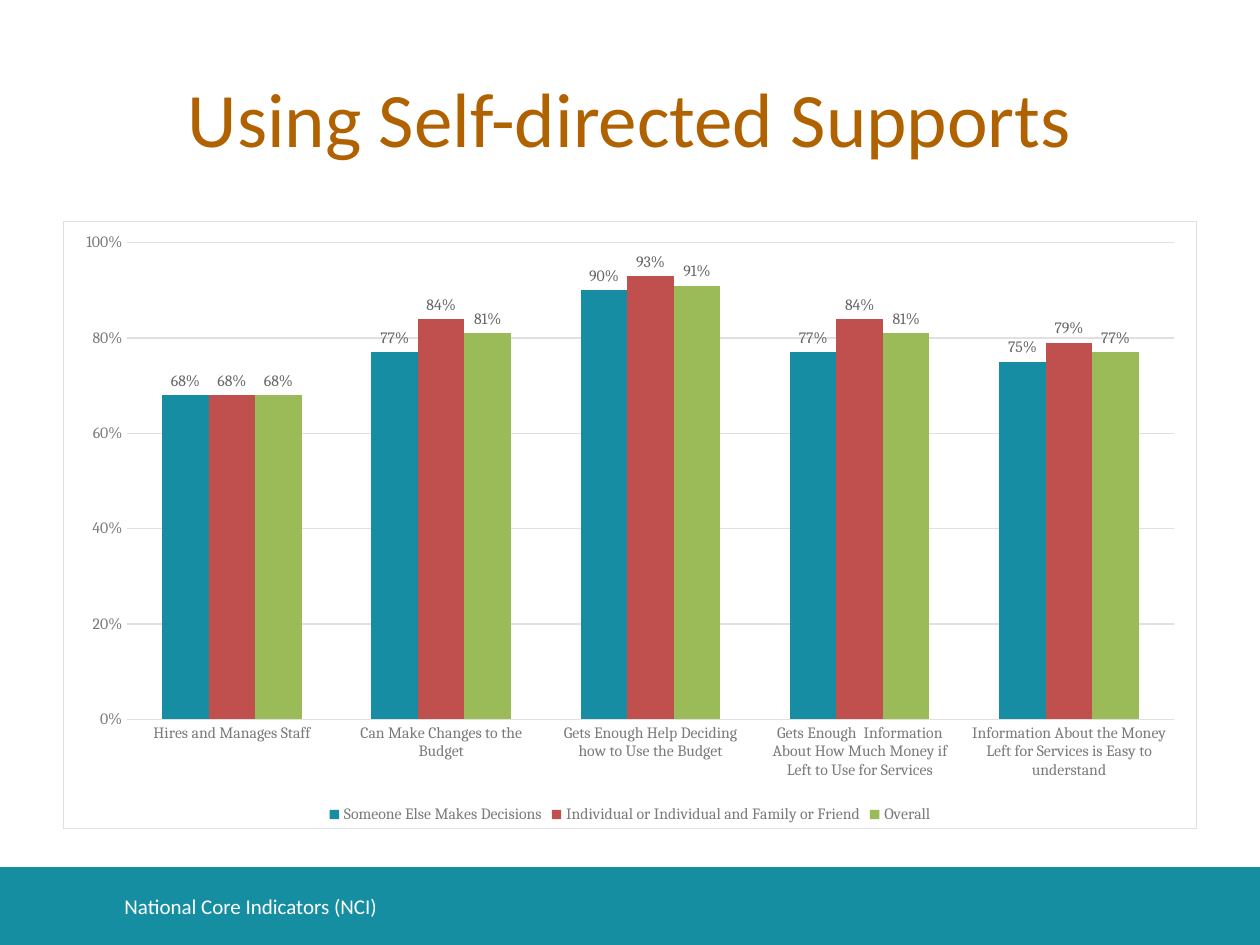
from lxml import etree
from pptx import Presentation
from pptx.chart.data import CategoryChartData
from pptx.dml.color import RGBColor
from pptx.enum.chart import XL_CHART_TYPE, XL_LABEL_POSITION, XL_LEGEND_POSITION, XL_TICK_MARK
from pptx.enum.shapes import MSO_SHAPE
from pptx.enum.text import MSO_ANCHOR, PP_ALIGN
from pptx.oxml import parse_xml
from pptx.oxml.ns import nsdecls, qn
from pptx.util import Cm, Pt

COLUMNS = XL_CHART_TYPE.COLUMN_CLUSTERED
OUTSIDE_END = XL_LABEL_POSITION.OUTSIDE_END
LEGEND_BOTTOM = XL_LEGEND_POSITION.BOTTOM
NO_TICK = XL_TICK_MARK.NONE
RECTANGLE = MSO_SHAPE.RECTANGLE
MIDDLE = MSO_ANCHOR.MIDDLE
LEFT, CENTER = PP_ALIGN.LEFT, PP_ALIGN.CENTER

WHITE = RGBColor(0xFF, 0xFF, 0xFF)
TEAL = RGBColor(0x16, 0x8E, 0xA2)
ORANGE = RGBColor(0xB0, 0x61, 0x00)
RULE_GREY = RGBColor(0xE0, 0xE0, 0xE0)
AXIS_GREY = RGBColor(0x7A, 0x7A, 0x7A)
LABEL_GREY = RGBColor(0x66, 0x66, 0x66)
CHART_GREY = RGBColor(0x33, 0x33, 0x33)
TEAL_BAR = RGBColor(0x16, 0x8D, 0xA2)
RED_BAR = RGBColor(0xC0, 0x50, 0x4D)
GREEN_BAR = RGBColor(0x9B, 0xBB, 0x59)

CATEGORIES = [
    "Hires and Manages Staff",
    "Can Make Changes to the Budget",
    "Gets Enough Help Deciding how to Use the Budget",
    "Gets Enough  Information About How Much Money if Left to Use for Services",
    "Information About the Money Left for Services is Easy to understand",
]
SERIES = [
    ("Someone Else Makes Decisions", (0.68, 0.77, 0.90, 0.77, 0.75), TEAL_BAR),
    ("Individual or Individual and Family or Friend",
     (0.68, 0.84, 0.93, 0.84, 0.79), RED_BAR),
    ("Overall", (0.68, 0.81, 0.91, 0.81, 0.77), GREEN_BAR),
]


def format_font(font, size, color, name):
    font.size = Pt(size)
    font.color.rgb = color
    font.name = name


def write_text(shape, text, size, color, align=LEFT, name="Calibri"):
    frame = shape.text_frame
    frame.word_wrap = True
    frame.vertical_anchor = MIDDLE
    para = frame.paragraphs[0]
    para.alignment = align
    span = para.add_run()
    span.text = text
    format_font(span.font, size, color, name)


def format_line(line, color=RULE_GREY):
    line.color.rgb = color
    line.width = Pt(0.75)


def frame_chart(chart):
    """Give the chart area a white fill and a thin border."""
    area = parse_xml(f"<c:spPr {nsdecls('c', 'a')}/>")
    fill = etree.SubElement(area, qn("a:solidFill"))
    border = etree.SubElement(area, qn("a:ln"), w=str(Pt(0.75)))
    border_fill = etree.SubElement(border, qn("a:solidFill"))
    for parent, color in ((fill, WHITE), (border_fill, RULE_GREY)):
        etree.SubElement(parent, qn("a:srgbClr"), val=str(color))
    chart.element.find(qn("c:chart")).addnext(area)


def add_footer(page, left, top, width, height):
    band = page.shapes.add_shape(RECTANGLE, left, top, width, height)
    band.shadow.inherit = False
    band.fill.solid()
    band.fill.fore_color.rgb = TEAL
    band.line.fill.background()
    label_height = Cm(1.02)
    label = page.shapes.add_textbox(
        left + Cm(2.26), top + Cm(0.28), Cm(18.8), label_height)
    write_text(label, "National Core Indicators (NCI)", 12, WHITE)


def add_title(page, left, top, width, height):
    title = page.shapes.title
    title.left, title.top, title.width, title.height = left, top, width, height
    write_text(title, "Using Self-directed Supports", 44, ORANGE, align=CENTER)


def add_support_chart(page, left, top, width, height):
    data = CategoryChartData(number_format="0%")
    data.categories = CATEGORIES
    for name, values, _ in SERIES:
        data.add_series(name, values)
    chart = page.shapes.add_chart(COLUMNS, left, top, width, height, data).chart
    chart.has_title = False
    format_font(chart.font, 10, CHART_GREY, "Cambria")
    frame_chart(chart)

    # Axes
    percent_axis, category_axis = chart.value_axis, chart.category_axis
    for axis in (percent_axis, category_axis):
        axis.major_tick_mark = axis.minor_tick_mark = NO_TICK
        format_font(axis.tick_labels.font, 9, AXIS_GREY, "Cambria")
    format_line(category_axis.format.line)
    percent_axis.format.line.fill.background()
    percent_axis.minimum_scale, percent_axis.maximum_scale = 0, 1
    percent_axis.major_unit = 0.2
    percent_axis.tick_labels.number_format = "0%"
    percent_axis.tick_labels.number_format_is_linked = False
    format_line(percent_axis.major_gridlines.format.line)

    # Legend
    chart.has_legend = True
    chart.legend.position = LEGEND_BOTTOM
    chart.legend.include_in_layout = False
    format_font(chart.legend.font, 9, AXIS_GREY, "Cambria")

    # Columns and their labels
    plot = chart.plots[0]
    plot.gap_width, plot.overlap = 150, 0
    plot.vary_by_categories = False
    for series, (_, _, color) in zip(plot.series, SERIES):
        series.invert_if_negative = False
        series.format.fill.solid()
        series.format.fill.fore_color.rgb = color
        labels = series.data_labels
        labels.show_value = True
        labels.position = OUTSIDE_END
        labels.number_format = "0%"
        labels.number_format_is_linked = False
        format_font(labels.font, 9, LABEL_GREY, "Cambria")


def main():
    deck = Presentation()
    deck.slide_width, deck.slide_height = Cm(25.4), Cm(19.05)
    page = deck.slides.add_slide(deck.slide_layouts[5])
    margin = Cm(1.27)
    content_width = deck.slide_width - 2 * margin
    band_height = Cm(1.57)

    add_footer(page, 0, deck.slide_height - band_height, deck.slide_width, band_height)
    add_title(page, margin, Cm(0.76), content_width, Cm(3.18))
    add_support_chart(page, margin, Cm(4.45), content_width, Cm(12.27))
    deck.save("out.pptx")


if __name__ == "__main__":
    main()
